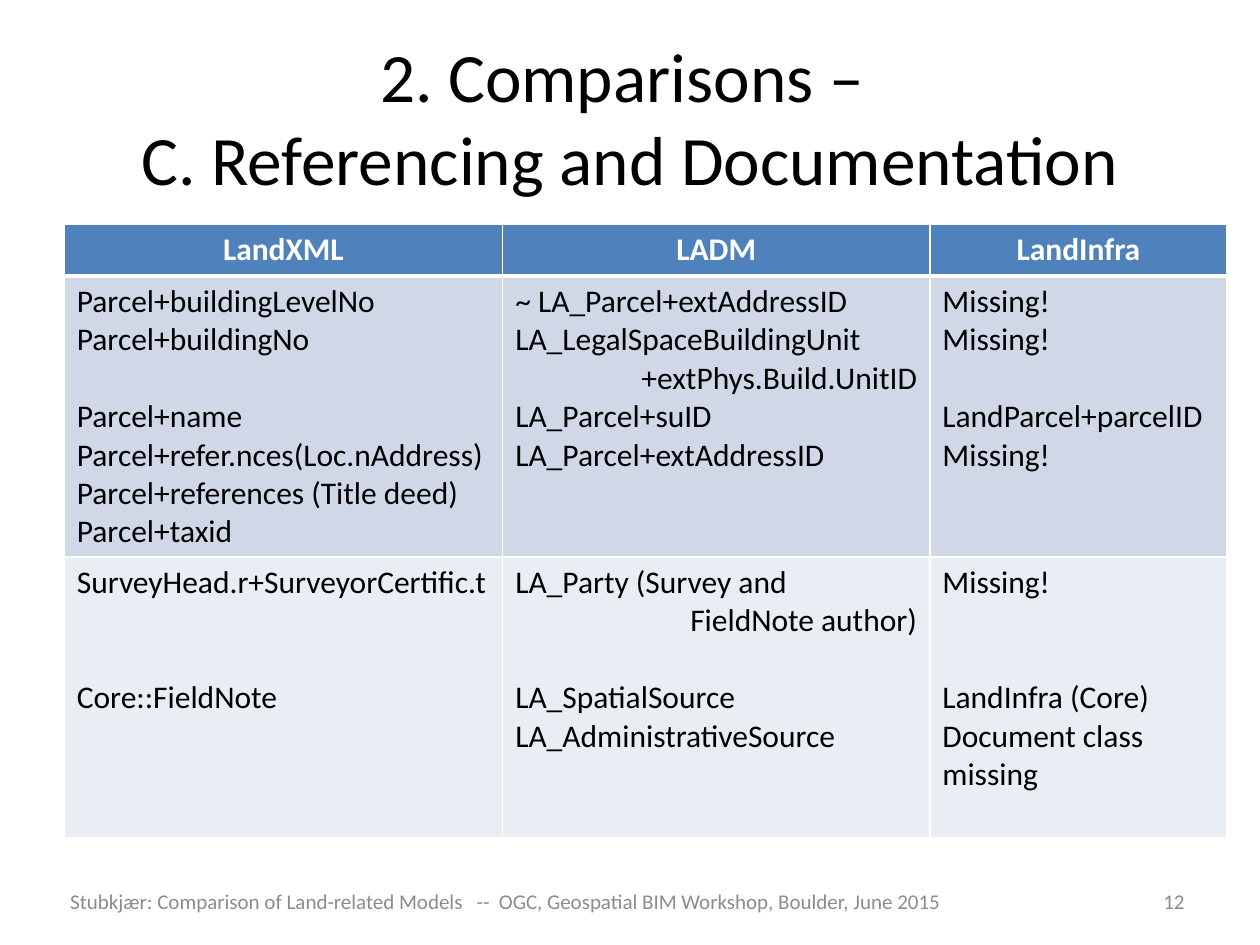
from pptx import Presentation
from pptx.dml.color import RGBColor
from pptx.enum.text import MSO_ANCHOR, PP_ALIGN
from pptx.oxml import parse_xml
from pptx.oxml.ns import nsdecls
from pptx.util import Inches, Pt

LEFT, CENTER, RIGHT = PP_ALIGN.LEFT, PP_ALIGN.CENTER, PP_ALIGN.RIGHT
MIDDLE, TOP = MSO_ANCHOR.MIDDLE, MSO_ANCHOR.TOP

TITLE = "2. Comparisons – \vC. Referencing and Documentation"
FOOTER = ("Stubkjær: Comparison of Land-related Models   --  "
          "OGC, Geospatial BIM Workshop, Boulder, June 2015")
PAGE = "12"

HEADERS = ["LandXML", "LADM", "LandInfra"]
BODY = [
    [
        ["Parcel+buildingLevelNo", "Parcel+buildingNo",
         {"text": "Parcel+name", "gap": 1}, "Parcel+refer.nces(Loc.nAddress)",
         "Parcel+references (Title deed)", "Parcel+taxid"],
        ["~ LA_Parcel+extAddressID", "LA_LegalSpaceBuildingUnit",
         {"text": "+extPhys.Build.UnitID", "align": RIGHT},
         "LA_Parcel+suID", "LA_Parcel+extAddressID"],
        ["Missing!", "Missing!", {"text": "LandParcel+parcelID", "gap": 1}, "Missing!"],
    ],
    [
        ["SurveyHead.r+SurveyorCertific.t", {"text": "Core::FieldNote", "gap": 2}],
        ["LA_Party (Survey and", {"text": "FieldNote author)", "align": RIGHT},
         {"text": "LA_SpatialSource", "gap": 1}, "LA_AdministrativeSource"],
        ["Missing!", {"text": "LandInfra (Core)", "gap": 2}, "Document class missing"],
    ],
]
COL_WIDTHS = [3.48, 3.39, 2.36]
ROW_HEIGHTS = [0.41, 2.23, 2.23]

THEME = {
    "font": "Calibri", "title": 39.6, "table": 18, "footer": 12, "line": 22,
    "text": "000000", "white": "FFFFFF", "muted": "8C8C8C",
    "header": "4F81BD", "bands": ["D0D8E8", "E9EDF4"],
}


def style(p, size, color, align=LEFT, bold=False):
    p.alignment = align
    p.font.name = THEME["font"]
    p.font.size = Pt(size)
    p.font.bold = bold
    p.font.color.rgb = RGBColor.from_string(color)


def add_text(slide, box, text, size, color, align):
    tf = slide.shapes.add_textbox(*map(Inches, box)).text_frame
    tf.word_wrap = True
    tf.vertical_anchor = MIDDLE
    p = tf.paragraphs[0]
    p.text = text
    style(p, size, color, align)


def set_borders(cell, bottom):
    tc_pr = cell._tc.get_or_add_tcPr()
    for i, (side, width) in enumerate(zip("LRTB", (1, 1, 1, bottom))):
        tc_pr.insert(i, parse_xml(
            f'<a:ln{side} {nsdecls("a")} w="{Pt(width)}"><a:solidFill>'
            f'<a:srgbClr val="{THEME["white"]}"/></a:solidFill></a:ln{side}>'))


def fill_cell(cell, lines, fill, color, align=LEFT, anchor=TOP, bold=False, bottom=1):
    cell.fill.solid()
    cell.fill.fore_color.rgb = RGBColor.from_string(fill)
    cell.vertical_anchor = anchor
    set_borders(cell, bottom)
    tf = cell.text_frame
    for i, line in enumerate(lines):
        item = line if isinstance(line, dict) else {"text": line}
        p = tf.add_paragraph() if i else tf.paragraphs[0]
        p.text = item["text"]
        p.space_before = Pt(item.get("gap", 0) * THEME["line"])
        style(p, THEME["table"], color, item.get("align", align), bold)


def add_comparison(slide):
    table = slide.shapes.add_table(
        len(ROW_HEIGHTS), len(COL_WIDTHS), Inches(0.51), Inches(1.78),
        Inches(sum(COL_WIDTHS)), Inches(sum(ROW_HEIGHTS))).table
    for col, width in zip(table.columns, COL_WIDTHS):
        col.width = Inches(width)
    for row, height in zip(table.rows, ROW_HEIGHTS):
        row.height = Inches(height)
    for c, header in enumerate(HEADERS):
        fill_cell(table.cell(0, c), [header], THEME["header"], THEME["white"],
                  CENTER, MIDDLE, True, 3)
    for r, (row, band) in enumerate(zip(BODY, THEME["bands"]), 1):
        for c, lines in enumerate(row):
            fill_cell(table.cell(r, c), lines, band, THEME["text"])


def main():
    """Build the comparison slide and save it."""
    prs = Presentation()
    prs.slide_width, prs.slide_height = Inches(10), Inches(7.5)
    slide = prs.slides.add_slide(prs.slide_layouts[6])
    add_text(slide, (0.5, 0.3, 9, 1.25), TITLE, THEME["title"], THEME["text"], CENTER)
    add_comparison(slide)
    for box, text, align in [((0.43, 6.95, 7.17, 0.4), FOOTER, CENTER),
                             ((7.17, 6.95, 2.33, 0.4), PAGE, RIGHT)]:
        add_text(slide, box, text, THEME["footer"], THEME["muted"], align)
    prs.save("out.pptx")


if __name__ == "__main__":
    main()
